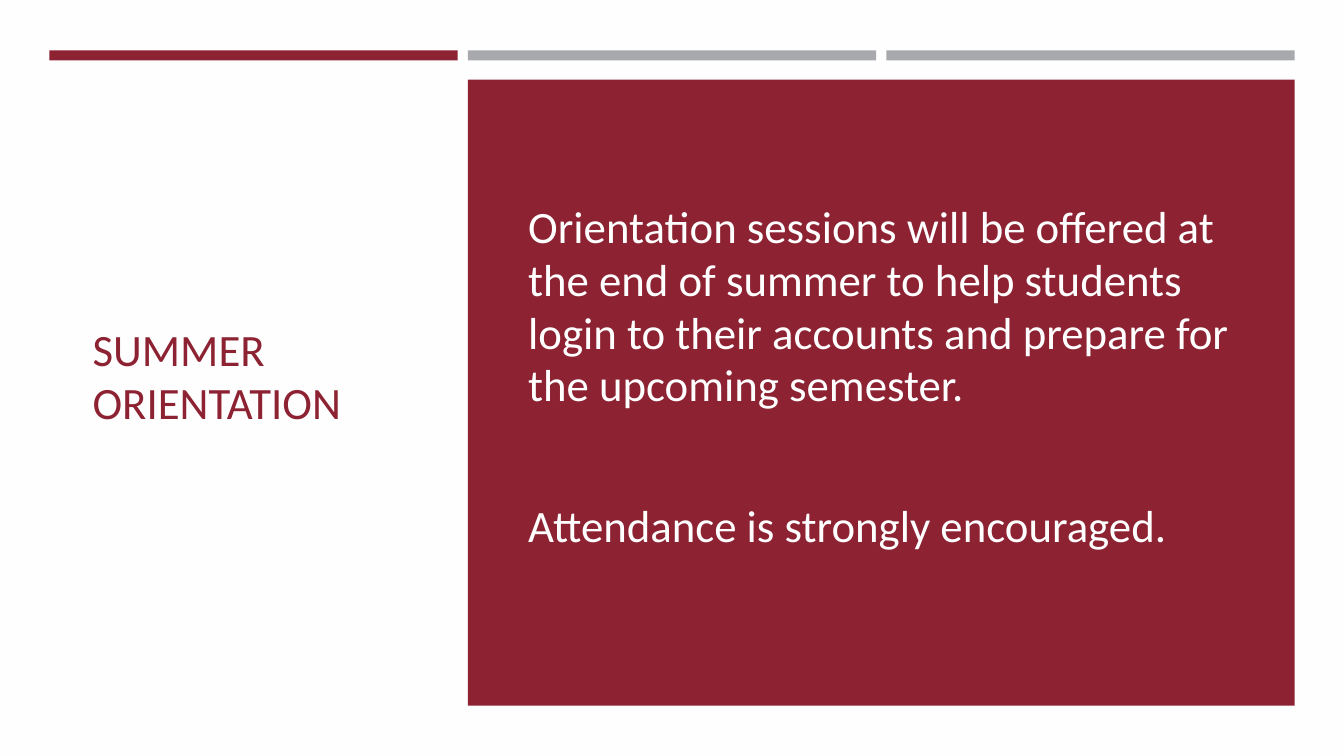
import pptx
import pptx.dml.color
import pptx.enum.shapes
import pptx.enum.text
import pptx.util

PX = 9144  # EMU per px, 100 px to the inch
COLORS = {"back": "FFFEFF", "crimson": "8C2232", "gray": "A7A9AC", "white": "FFFFFF"}
FONT = "Calibri"


def rgb(name):
    return pptx.dml.color.RGBColor.from_string(COLORS[name])


def add_rect(s, x, y, w, h, color):
    sp = s.shapes.add_shape(pptx.enum.shapes.MSO_SHAPE.RECTANGLE,
                            x * PX, y * PX, w * PX, h * PX)
    sp.shadow.inherit = False
    sp.fill.solid()
    sp.fill.fore_color.rgb = rgb(color)
    sp.line.fill.background()


def add_text(s, x, y, w, h, *paragraphs, color, size=32, gap=0, spacing=0.98):
    tf = s.shapes.add_textbox(x * PX, y * PX, w * PX, h * PX).text_frame
    tf.word_wrap = True
    tf.vertical_anchor = pptx.enum.text.MSO_ANCHOR.MIDDLE
    for i, text in enumerate(paragraphs):
        p = tf.add_paragraph() if i else tf.paragraphs[0]
        p.line_spacing = spacing
        if i:
            p.space_before = pptx.util.Pt(gap)
        r = p.add_run()
        r.text = text
        r.font.name = FONT
        r.font.size = pptx.util.Pt(size)
        r.font.color.rgb = rgb(color)


def add_top_bars(s, x, y, w, h, gap=10):
    colors = ("crimson", "gray", "gray")
    bar = (w - gap * (len(colors) - 1)) // len(colors)
    for i, color in enumerate(colors):
        add_rect(s, x + i * (bar + gap), y, bar, h, color)


def add_title(s, x, y, w, h):
    add_text(s, x, y, w, h, "SUMMER ORIENTATION", color="crimson")


def add_message_panel(s, x, y, w, h):
    add_rect(s, x, y, w, h, "crimson")
    add_text(s, x + 50, y + 38, w - 98, h - 106,
             "Orientation sessions will be offered at the end of summer to help "
             "students login to their accounts and prepare for the upcoming semester.",
             "Attendance is strongly encouraged.",
             color="white", gap=63)


def main():
    prs = pptx.Presentation()
    prs.slide_width = 1333 * PX
    prs.slide_height = 750 * PX
    s = prs.slides.add_slide(prs.slide_layouts[6])

    # Background
    s.background.fill.solid()
    s.background.fill.fore_color.rgb = rgb("back")

    # Regions
    add_title(s, 82, 117, 334, 515)
    add_top_bars(s, 49, 50, 1235, 10)
    add_message_panel(s, 464, 79, 820, 621)

    prs.save("out.pptx")


if __name__ == "__main__":
    main()
